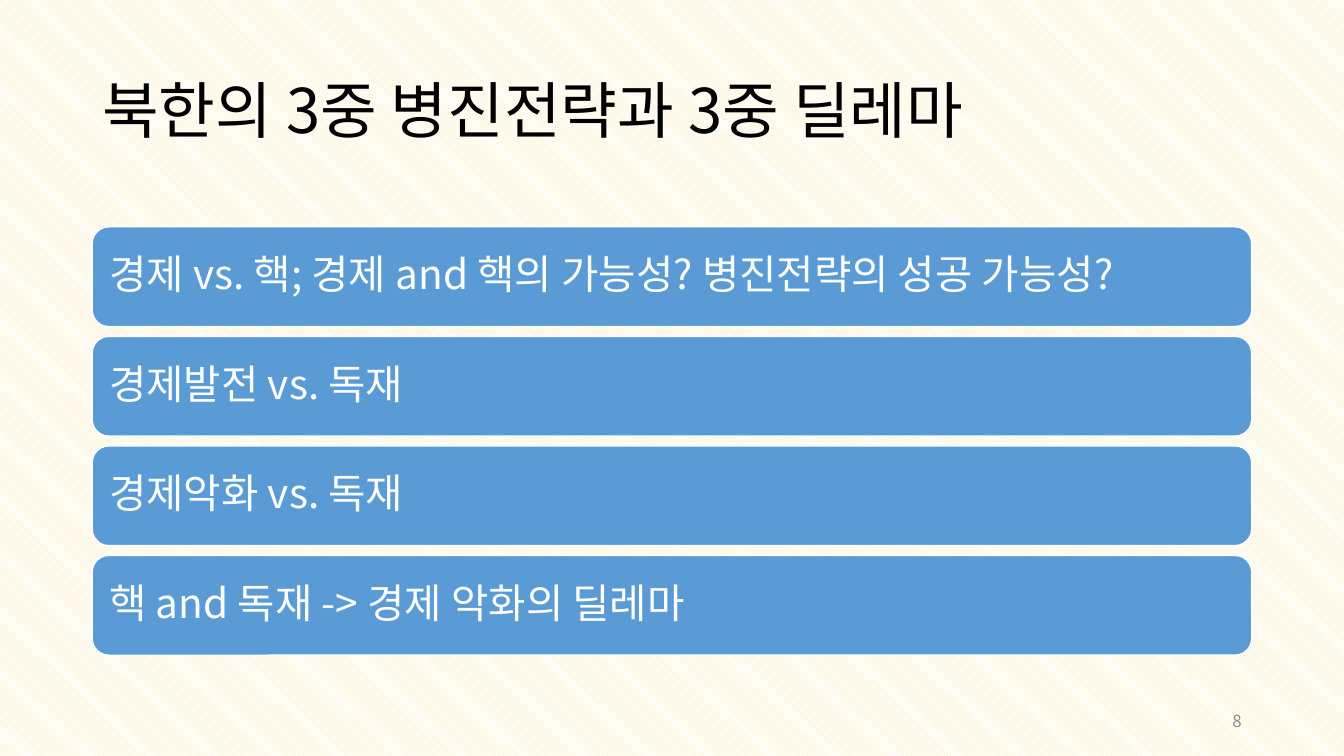
from lxml import etree
from pptx import Presentation
from pptx.dml.color import RGBColor
from pptx.enum.dml import MSO_PATTERN
from pptx.enum.shapes import MSO_SHAPE
from pptx.enum.text import MSO_ANCHOR, PP_ALIGN
from pptx.oxml.ns import qn
from pptx.util import Inches, Pt

STRIPES = MSO_PATTERN.LIGHT_DOWNWARD_DIAGONAL
ROUNDED = MSO_SHAPE.ROUNDED_RECTANGLE
MIDDLE = MSO_ANCHOR.MIDDLE
LEFT, RIGHT = PP_ALIGN.LEFT, PP_ALIGN.RIGHT

TITLE = "북한의 3중 병진전략과 3중 딜레마"
DILEMMAS = [
    "경제 vs. 핵; 경제 and 핵의 가능성? 병진전략의 성공 가능성?",
    "경제발전 vs. 독재",
    "경제악화 vs. 독재",
    "핵 and 독재 -> 경제 악화의 딜레마",
]
PAGE_NUMBER = "8"

FONT = "Noto Sans CJK KR"
WHITE, BLACK, GREY = "FFFFFF", "000000", "8C8C8C"
BAR_BLUE, STRIPE_YELLOW = "5B9BD5", "FFE699"

SLIDE_W, SLIDE_H = 13.33, 7.5
CONTENT_W = 11.5
MARGIN = (SLIDE_W - CONTENT_W) / 2
BARS_TOP, BARS_BOTTOM, BAR_H = 2.25, 6.5, 0.99
BAR_PITCH = (BARS_BOTTOM - BARS_TOP - BAR_H) / (len(DILEMMAS) - 1)
BAR_INSET = 0.12
NUMBER_W = 3


def rgb(value):
    return RGBColor.from_string(value)


def write(shape, text, size, color, align=LEFT, spacing=0.9):
    """Put one vertically centred paragraph in the shape, in Latin and Korean font."""
    frame = shape.text_frame
    frame.text = text
    frame.word_wrap = True
    frame.vertical_anchor = MIDDLE
    paragraph = frame.paragraphs[0]
    paragraph.alignment = align
    paragraph.line_spacing = spacing
    font = paragraph.runs[0].font
    font.name = FONT
    font.size = Pt(size)
    font.color.rgb = rgb(color)
    properties = paragraph.runs[0]._r.get_or_add_rPr()
    etree.SubElement(properties, qn("a:ea"), typeface=FONT)


def add_text(slide, left, top, width, height, *text_style):
    box = slide.shapes.add_textbox(*map(Inches, (left, top, width, height)))
    write(box, *text_style)


def add_bar(slide, top, text):
    bar = slide.shapes.add_shape(
        ROUNDED, *map(Inches, (MARGIN, top, CONTENT_W, BAR_H)))
    bar.shadow.inherit = False
    bar.fill.solid()
    bar.fill.fore_color.rgb = rgb(BAR_BLUE)
    bar.line.color.rgb = rgb(WHITE)
    bar.line.width = Pt(1)
    frame = bar.text_frame
    frame.margin_left = frame.margin_right = Inches(BAR_INSET)
    frame.margin_top = frame.margin_bottom = Inches(BAR_INSET)
    write(bar, text, 29, WHITE)


def main():
    deck = Presentation()
    deck.slide_width, deck.slide_height = Inches(SLIDE_W), Inches(SLIDE_H)
    slide = deck.slides.add_slide(deck.slide_layouts[6])

    backdrop = slide.background.fill
    backdrop.patterned()
    backdrop.pattern = STRIPES
    backdrop.fore_color.rgb = rgb(STRIPE_YELLOW)
    backdrop.back_color.rgb = rgb(WHITE)

    add_text(slide, MARGIN, 0.4, CONTENT_W, 1.45, TITLE, 44, BLACK)
    for row, dilemma in enumerate(DILEMMAS):
        add_bar(slide, BARS_TOP + row * BAR_PITCH, dilemma)
    add_text(slide, MARGIN + CONTENT_W - NUMBER_W, 6.95, NUMBER_W, 0.4,
             PAGE_NUMBER, 12, GREY, RIGHT, 1.0)

    deck.save("out.pptx")


if __name__ == "__main__":
    main()
